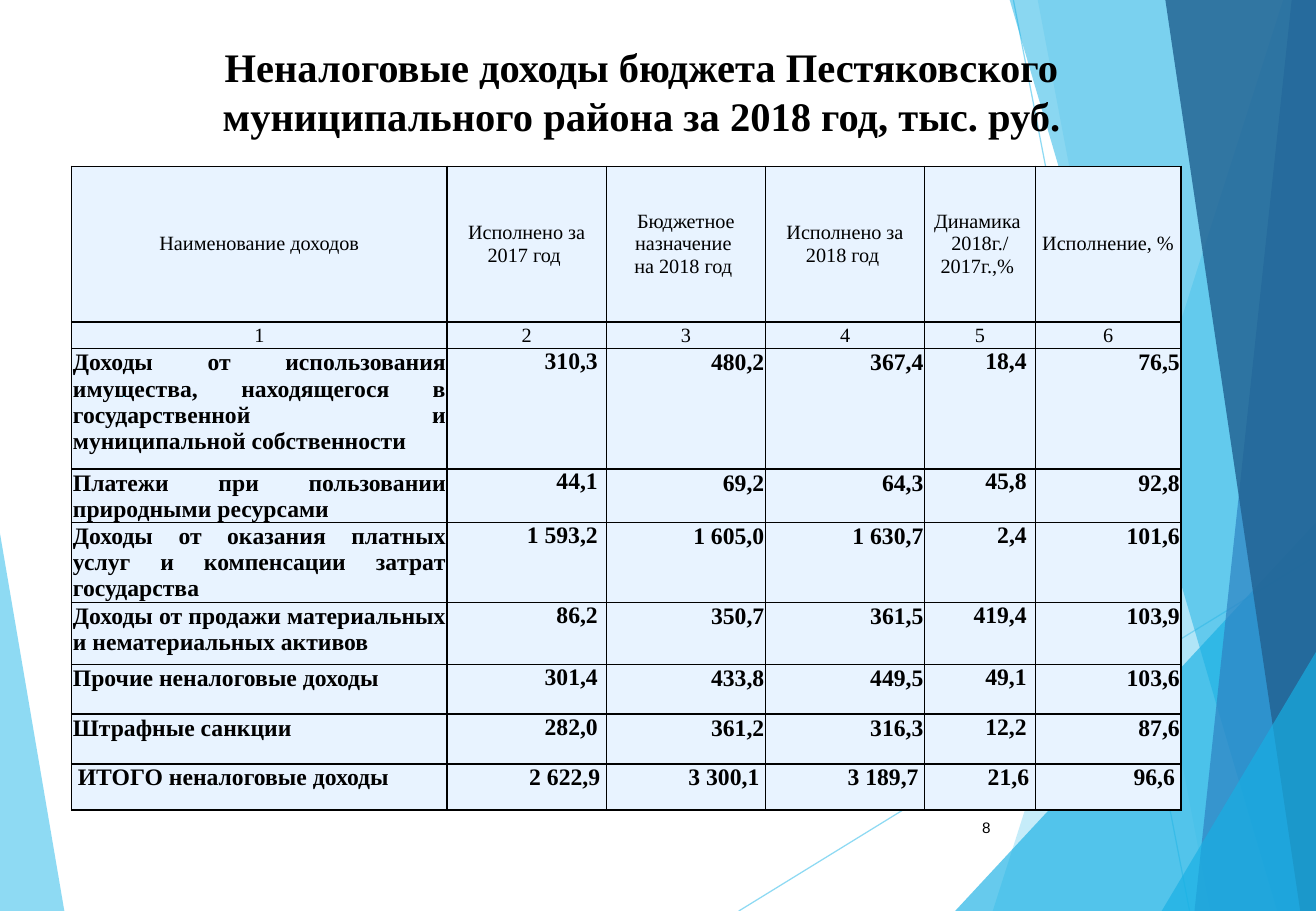
from typing import NamedTuple

from lxml.etree import Element, SubElement
from pptx import Presentation
from pptx.dml.color import RGBColor as Rgb
from pptx.enum.shapes import MSO_CONNECTOR as Link
from pptx.enum.text import MSO_ANCHOR as Anchor, PP_ALIGN as Align
from pptx.oxml.ns import qn
from pptx.util import Emu, Pt

PX = 9144  # 100 px to the inch
HUES = {"sky": "5FCBEF", "cyan": "17B0E4", "blue": "2E83C3", "navy": "226292",
        "ice": "E8F3FF", "ink": "000000"}
SERIF = "Times New Roman"


class Facet(NamedTuple):
    hue: str
    alpha: int
    points: list[tuple[int, int]]


class Stroke(NamedTuple):
    start: tuple[int, int]
    end: tuple[int, int]
    width: float
    alpha: int


class Style(NamedTuple):
    font: dict
    align: Align
    anchor: Anchor = Anchor.TOP
    pad: tuple[int, int] = (0, 0)  # sides, top
    pitch: Emu | None = None  # fixed line height


class Label(NamedTuple):
    text: str
    box: tuple[int, int, int, int]
    style: Style


def px(value: int) -> Emu:
    return Emu(value * PX)


def rgb(hue: str) -> Rgb:
    return Rgb.from_string(HUES[hue])


def fade(shape, alpha: int) -> None:
    for node in shape._element.spPr.iter(qn("a:srgbClr")):
        SubElement(node, qn("a:alpha"), val=str(alpha * 1000))


def draw_facet(slide, facet: Facet) -> None:
    first, *rest = facet.points
    pen = slide.shapes.build_freeform(*first, scale=PX)
    pen.add_line_segments(rest, close=True)
    shape = pen.convert_to_shape()
    shape.shadow.inherit = False
    shape.fill.solid()
    shape.fill.fore_color.rgb = rgb(facet.hue)
    shape.line.fill.background()
    fade(shape, facet.alpha)


def draw_stroke(slide, stroke: Stroke) -> None:
    ends = map(px, stroke.start + stroke.end)
    line = slide.shapes.add_connector(Link.STRAIGHT, *ends)
    line.line.width = Pt(stroke.width)
    line.line.color.rgb = rgb("sky")
    SubElement(line._element.spPr, qn("a:effectLst"))
    if stroke.alpha < 100:
        fade(line, stroke.alpha)


def write(frame, text: str, style: Style) -> None:
    frame.text = text
    for para in frame.paragraphs:
        para.alignment = style.align
        para.line_spacing = style.pitch
        for run in para.runs:
            for name, value in style.font.items():
                setattr(run.font, name, value)
            run.font.color.rgb = rgb("ink")


def draw_label(slide, label: Label) -> None:
    frame = slide.shapes.add_textbox(*map(px, label.box)).text_frame
    frame.word_wrap = True
    frame.vertical_anchor = label.style.anchor
    write(frame, label.text, label.style)


def add_edges(cell) -> None:
    props = cell._tc.get_or_add_tcPr()
    for spot, side in enumerate("LRTB"):
        edge = Element(qn(f"a:ln{side}"), w=str(Pt(1)))
        fill = SubElement(edge, qn("a:solidFill"))
        SubElement(fill, qn("a:srgbClr"), val=HUES["ink"])
        props.insert(spot, edge)


def fill_cell(cell, text: str, style: Style) -> None:
    side, top = style.pad
    form = {"margin_left": px(side), "margin_right": px(side),
            "margin_top": px(top), "margin_bottom": 0,
            "vertical_anchor": style.anchor}
    for name, value in form.items():
        setattr(cell, name, value)
    cell.fill.solid()
    cell.fill.fore_color.rgb = rgb("ice")
    add_edges(cell)
    write(cell.text_frame, text, style)


# Backdrop
BACK = [Facet("sky", 70, [(0, 439), (53, 750), (0, 750)])]
RAYS = [Stroke((608, 750), (1084, 457), 0.75, 70),
        Stroke((834, 0), (979, 750), 0.75, 70)]
FRONT = [
    Facet("sky", 36, [(1056, 0), (817, 750), (1084, 750), (1084, 0)]),
    Facet("sky", 20, [(854, 0), (996, 750), (1084, 750), (1084, 0)]),
    Facet("cyan", 66, [(786, 750), (1084, 429), (1084, 750)]),
    Facet("cyan", 50, [(831, 0), (1051, 750), (1084, 750), (1084, 0)]),
    Facet("blue", 70, [(1063, 0), (983, 750), (1084, 750), (1084, 0)]),
    Facet("navy", 82, [(959, 0), (1070, 750), (1084, 750), (1084, 0)]),
    Facet("cyan", 66, [(956, 750), (1084, 535), (1084, 750)]),
]
SPECK = Stroke((102, 326), (102, 327), 1, 100)

# Text styles
PLAIN = {"name": SERIF, "size": Pt(12), "bold": False}
BOLD = {"name": SERIF, "size": Pt(14), "bold": True}
HEAD = Style(PLAIN, Align.CENTER, Anchor.MIDDLE, (5, 0))
TIGHT = Style(BOLD, Align.RIGHT, pad=(1, 1), pitch=Pt(15.5))
NAME = TIGHT._replace(align=Align.JUSTIFY)
WIDE = TIGHT._replace(pad=(7, 0))
TOTAL = TIGHT._replace(pad=(5, 0))
ITEM = [NAME, WIDE, TIGHT, TIGHT, WIDE, TIGHT]
LAST = [TOTAL._replace(align=Align.LEFT)] + [TOTAL] * 5

LABELS = [
    Label("8", (764, 661, 61, 40),
          Style({"name": "Arial", "size": Pt(9)}, Align.RIGHT, Anchor.MIDDLE)),
    Label("Неналоговые доходы бюджета Пестяковского муниципального района "
          "за 2018 год, тыс. руб.", (66, 30, 924, 156),
          Style({"name": SERIF, "size": Pt(24), "bold": True}, Align.CENTER)),
]

# Table
COLS = [309, 131, 131, 131, 91, 120]
ROWS = [128, 22, 99, 44, 66, 51, 41, 41, 38]
DATA = [
    ["Наименование доходов", "Исполнено за 2017 год ",
     "Бюджетное назначение \nна 2018 год ", "Исполнено за 2018 год ",
     "Динамика \n2018г./ 2017г.,% ", "Исполнение, %"],
    ["1", "2", "3", "4", "5", "6"],
    ["Доходы от использовaния имуществa, нaходящегося в госудaрственной и "
     "муниципaльной собственности",
     "310,3", "480,2", "367,4", "18,4", "76,5"],
    ["Платежи при пользовании природными ресурсами",
     "44,1", "69,2", "64,3", "45,8", "92,8"],
    ["Доходы от окaзaния плaтных услуг и компенсaции зaтрaт госудaрствa",
     "1 593,2", "1 605,0", "1 630,7", "2,4", "101,6"],
    ["Доходы от продaжи мaтериaльных и немaтериaльных aктивов",
     "86,2", "350,7", "361,5", "419,4", "103,9"],
    ["Прочие ненaлоговые доходы",
     "301,4", "433,8", "449,5", "49,1", "103,6"],
    ["Штрафные санкции", "282,0", "361,2", "316,3", "12,2", "87,6"],
    ["ИТОГО неналоговые доходы",
     "2 622,9", "3 300,1", "3 189,7", "21,6", "96,6"],
]
STYLES = [[HEAD] * 6] * 2 + [ITEM] * 6 + [LAST]


def draw_table(slide) -> None:
    box = map(px, (59, 137, sum(COLS), sum(ROWS)))
    table = slide.shapes.add_table(len(ROWS), len(COLS), *box).table
    table.first_row = table.horz_banding = False
    for col, width in zip(table.columns, COLS):
        col.width = px(width)
    for row, height, texts, styles in zip(table.rows, ROWS, DATA, STYLES):
        row.height = px(height)
        for cell, text, style in zip(row.cells, texts, styles):
            fill_cell(cell, text, style)


def main() -> None:
    deck = Presentation()
    deck.slide_width, deck.slide_height = px(1083), px(750)
    slide = deck.slides.add_slide(deck.slide_layouts[6])
    for facet in BACK:
        draw_facet(slide, facet)
    for ray in RAYS:
        draw_stroke(slide, ray)
    for facet in FRONT:
        draw_facet(slide, facet)
    for label in LABELS:
        draw_label(slide, label)
    draw_table(slide)
    draw_stroke(slide, SPECK)
    deck.save("out.pptx")


if __name__ == "__main__":
    main()
